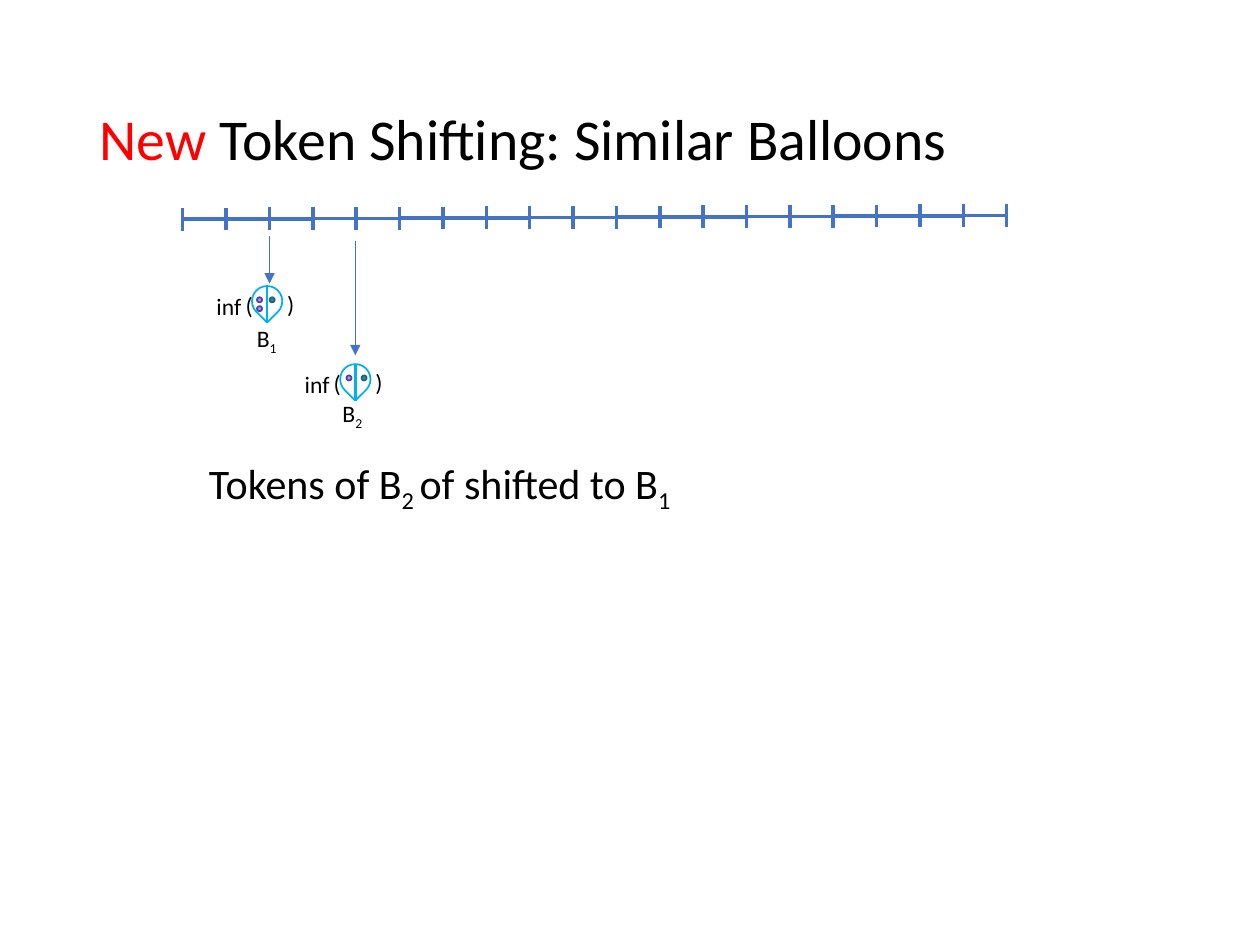
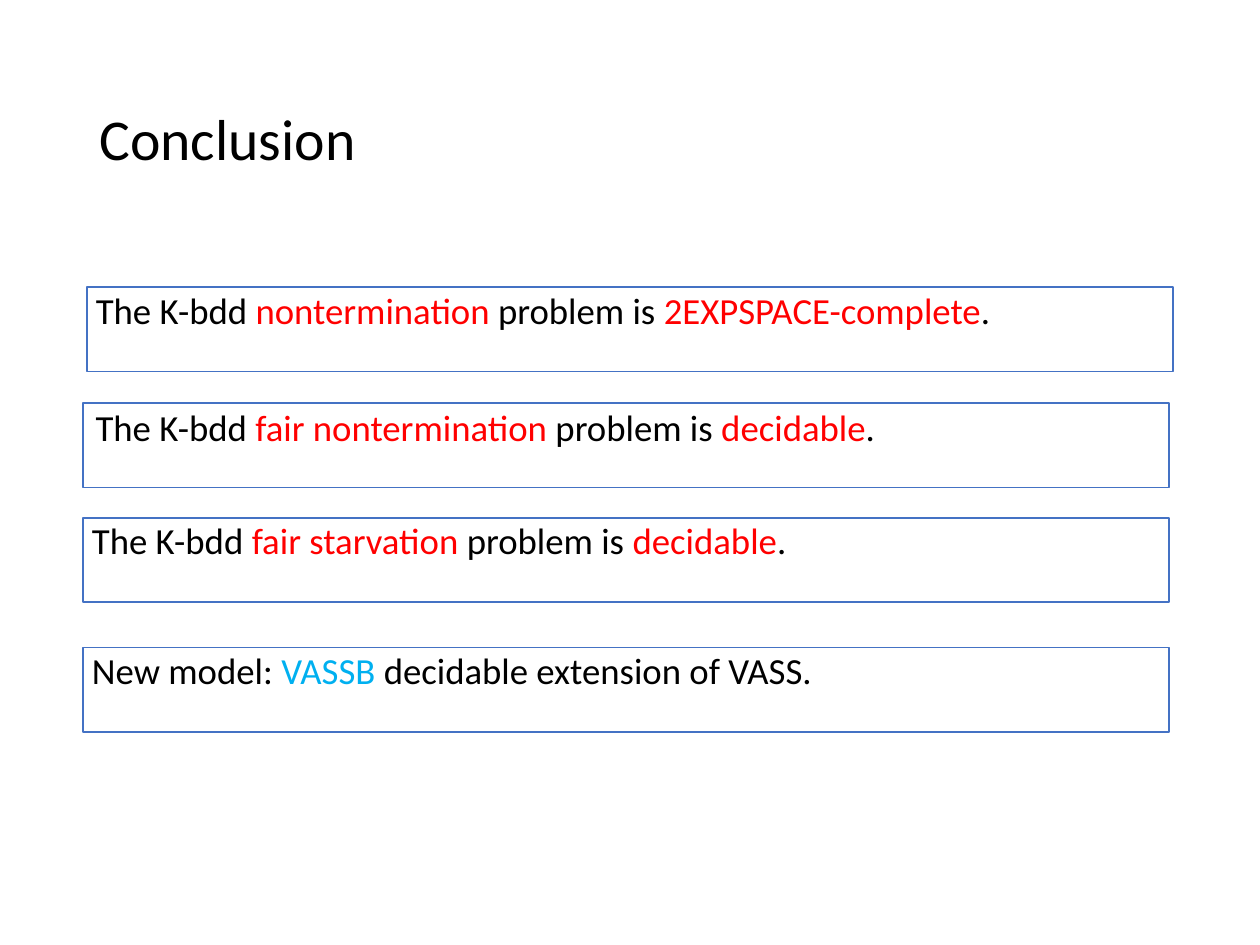
from lxml import etree
from pptx import Presentation
from pptx.dml.color import RGBColor
from pptx.enum.shapes import MSO_CONNECTOR, MSO_SHAPE
from pptx.enum.text import MSO_ANCHOR, PP_ALIGN
from pptx.oxml.ns import qn
from pptx.util import Inches, Pt

LINE = MSO_CONNECTOR.STRAIGHT
RECT, OVAL, TEARDROP = MSO_SHAPE.RECTANGLE, MSO_SHAPE.OVAL, MSO_SHAPE.TEAR
TOP, MIDDLE = MSO_ANCHOR.TOP, MSO_ANCHOR.MIDDLE
LEFT = PP_ALIGN.LEFT

FONT = "Calibri"
BLACK, WHITE, RED = "000000", "FFFFFF", "FF0000"
BLUE, SKY, NAVY = "4472C4", "00B0F0", "325491"
PINK, GREEN = "FF66FF", "00B050"
SUBSCRIPT = "-25000"


def rgb(color):
    """Turn a hex string into a colour."""
    return RGBColor.from_string(color)


def write(tf, runs, size, anchor=TOP, spacing=None, before=None):
    """Fill a text frame with one paragraph of (text, colour, is_subscript) runs."""
    tf.word_wrap = True
    tf.vertical_anchor = anchor
    p = tf.paragraphs[0]
    p.alignment = LEFT
    p.font.name, p.font.size = FONT, Pt(size)
    if spacing:
        p.line_spacing = spacing
    if before:
        p.space_before = Pt(before)
    for text, color, is_subscript in runs:
        r = p.add_run()
        r.text = text
        r.font.color.rgb = rgb(color)
        if is_subscript:
            r._r.get_or_add_rPr().set("baseline", SUBSCRIPT)


def plain(*texts):
    """Make black runs, every second one a subscript."""
    return [(text, BLACK, i % 2 == 1) for i, text in enumerate(texts)]


def accented(color, *texts):
    """Make runs that alternate between black and an accent colour."""
    return [(text, color if i % 2 else BLACK, False) for i, text in enumerate(texts)]


def add_text(s, x, y, w, h, runs, size, **style):
    """Add a text box."""
    box = s.shapes.add_textbox(Inches(x), Inches(y), Inches(w), Inches(h))
    write(box.text_frame, runs, size, **style)


def add_title(s, runs):
    """Add the title shared by the slides."""
    add_text(s, 0.69, 0.4, 8.62, 1.45, runs, 33, anchor=MIDDLE, spacing=0.9)


def add_shape(s, kind, x, y, w, h, fill, line):
    """Add a filled shape with a thin outline."""
    shape = s.shapes.add_shape(kind, Inches(x), Inches(y), Inches(w), Inches(h))
    shape.shadow.inherit = False
    shape.fill.solid()
    shape.fill.fore_color.rgb = rgb(fill)
    shape.line.color.rgb = rgb(line)
    shape.line.width = Pt(1)
    return shape


def add_line(s, x1, y1, x2, y2, color, width, arrow=False):
    """Add a straight line, with an arrowhead at its end if asked."""
    line = s.shapes.add_connector(LINE, Inches(x1), Inches(y1), Inches(x2), Inches(y2))
    line.line.color.rgb = rgb(color)
    line.line.width = Pt(width)
    if arrow:
        etree.SubElement(line.line._get_or_add_ln(), qn("a:tailEnd"), type="triangle")
    etree.SubElement(line._element.spPr, qn("a:effectLst"))


def add_timeline(s, left=1.45, right=7.99, start_y=1.74, end_y=1.71, steps=19):
    """Add the slightly rising axis with evenly spaced ticks."""
    step, rise = (right - left) / steps, (end_y - start_y) / steps
    for i in range(steps + 1):
        x, y = left + i * step, start_y + i * rise
        add_line(s, x, y - 0.09, x, y + 0.09, BLUE, 2)
        if i < steps:
            add_line(s, x, y, x + step, y, BLUE, 2)


def add_balloon(s, x, y, index, tokens, label_at, arrow_x, arrow_top, arrow_bottom):
    """Add a balloon with its tokens, its inf( ) label, its name and its arrow."""
    add_shape(s, TEARDROP, x, y, 0.24, 0.24, WHITE, SKY).rotation = 135
    add_line(s, x + 0.12, y, x + 0.12, y + 0.29, SKY, 1.5)
    for dx, dy, color in tokens:
        add_shape(s, OVAL, x + dx, y + dy, 0.04, 0.04, color, NAVY)
    for dx, dy, w, text in ((-0.38, 0, 0.44, "inf"), (-0.15, -0.01, 0.21, "("),
                            (0.18, -0.02, 0.21, ")")):
        add_text(s, x + dx, y + dy, w, 0.33, plain(text), 13.5)
    label_x, label_y = label_at
    add_text(s, label_x, label_y, 0.46, 0.33, plain("B", index), 13.5)
    add_line(s, arrow_x, arrow_top, arrow_x, arrow_bottom, BLUE, 0.5, arrow=True)


def add_result(s, x, y, runs, inset=(0.07, 0.04)):
    """Add an outlined box that states one result."""
    box = add_shape(s, RECT, x, y, 8.62, 0.67, WHITE, BLUE)
    tf = box.text_frame
    tf.margin_left = tf.margin_right = Inches(inset[0])
    tf.margin_top = tf.margin_bottom = Inches(inset[1])
    write(tf, runs, 21, spacing=0.9, before=7.5)


def build_token_shifting(s):
    """Build the slide on shifting tokens between similar balloons."""
    add_title(s, accented(RED, "", "New", " Token Shifting: Similar Balloons")[1:])
    add_balloon(s, 2, 2.27, "1",
                [(0.04, 0.09, PINK), (0.04, 0.16, PINK), (0.14, 0.09, GREEN)],
                (1.94, 2.52), 2.14, 1.87, 2.25)
    add_balloon(s, 2.7, 2.89, "2", [(0.05, 0.09, PINK), (0.17, 0.09, GREEN)],
                (2.62, 3.12), 2.82, 1.91, 2.82)
    add_timeline(s)
    add_text(s, 1.56, 3.58, 7.63, 0.5,
             plain("Tokens of B", "2 ", "of shifted to B", "1"), 24)


def build_conclusion(s):
    """Build the slide that lists the results."""
    add_title(s, plain("Conclusion"))
    add_result(s, 0.69, 2.28, accented(RED, "The K-bdd ", "nontermination ",
                                       "problem is ", "2EXPSPACE-complete", "."))
    add_result(s, 0.66, 3.2, accented(RED, "The K-bdd ", "fair nontermination ",
                                      "problem is ", "decidable", "."), (0.1, 0.05))
    add_result(s, 0.66, 4.11, accented(RED, "The K-bdd ", "fair starvation ",
                                       "problem is ", "decidable", "."))
    add_result(s, 0.66, 5.14, accented(SKY, "New model: ", "VASSB ",
                                       "decidable extension of VASS."))


def main():
    """Build and save the presentation."""
    prs = Presentation()
    prs.slide_width, prs.slide_height = Inches(10), Inches(7.5)
    for build in (build_token_shifting, build_conclusion):
        build(prs.slides.add_slide(prs.slide_layouts[6]))
    prs.save("out.pptx")


if __name__ == "__main__":
    main()
